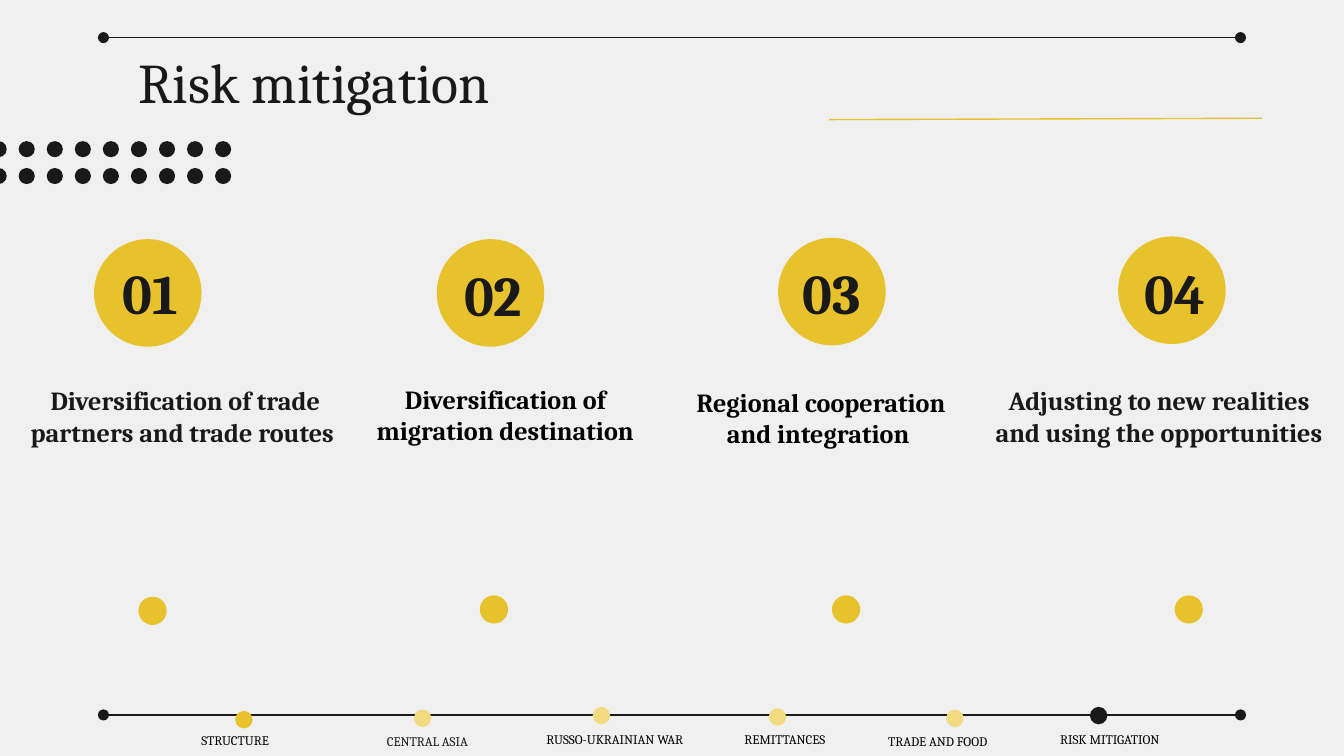
from dataclasses import dataclass

from lxml.etree import SubElement
from pptx import Presentation
from pptx.dml.color import RGBColor
from pptx.enum.shapes import MSO_CONNECTOR, MSO_SHAPE
from pptx.enum.text import MSO_ANCHOR, MSO_AUTO_SIZE, PP_ALIGN
from pptx.oxml.ns import qn
from pptx.util import Inches, Pt


@dataclass(frozen=True)
class Theme:
    font: str = "Cambria"
    background: str = "F0F0F0"
    ink: str = "191919"
    black: str = "000000"
    yellow: str = "E7C22C"
    pale_yellow: str = "F1DA80"
    title_size: int = 30
    heading_size: int = 14
    label_size: int = 7
    line_width: float = 0.75


THEME = Theme()

# number, circle left and top, number box left and top
NUMBERS = [
    ("01", 0.7, 1.78, 0.72, 1.93),
    ("02", 3.25, 1.78, 3.27, 1.94),
    ("03", 5.79, 1.77, 5.79, 1.93),
    ("04", 8.32, 1.76, 8.34, 1.93),
]

# heading, left, top, width, colour
HEADINGS = [
    ("Diversification of trade partners and trade routes ", 0.13, 2.85, 2.5, THEME.ink),
    ("Diversification of migration destination", 2.57, 2.84, 2.38, THEME.black),
    ("Regional cooperation and integration ", 4.92, 2.86, 2.38, THEME.black),
    ("Adjusting to new realities and using the opportunities ", 7.29, 2.85, 2.67, THEME.ink),
]

# left and top of the dot under each column
COLUMN_DOTS = [(1.03, 4.44), (3.57, 4.43), (6.19, 4.43), (8.74, 4.43)]

# left, top and colour of each progress marker
MARKERS = [
    (1.75, 5.29, THEME.yellow),
    (3.08, 5.28, THEME.pale_yellow),
    (4.41, 5.26, THEME.pale_yellow),
    (5.72, 5.27, THEME.pale_yellow),
    (7.04, 5.28, THEME.pale_yellow),
    (8.11, 5.26, THEME.ink),
]

# label, left, top, width, alignment, colour
LABELS = [
    ("STRUCTURE", 1.4, 5.4, 0.95, PP_ALIGN.LEFT, THEME.black),
    ("CENTRAL ASIA", 2.5, 5.41, 1.36, PP_ALIGN.CENTER, THEME.ink),
    ("RUSSO-UKRAINIAN WAR", 3.84, 5.39, 1.47, PP_ALIGN.CENTER, THEME.black),
    ("REMITTANCES", 5.44, 5.39, 0.91, PP_ALIGN.LEFT, THEME.black),
    ("TRADE AND FOOD", 6.51, 5.41, 1.86, PP_ALIGN.LEFT, THEME.black),
    ("RISK MITIGATION", 7.79, 5.39, 1.11, PP_ALIGN.LEFT, THEME.black),
]


def rgb(color):
    return RGBColor.from_string(color)


def add_circle(shapes, left, top, diameter, color):
    circle = shapes.add_shape(
        MSO_SHAPE.OVAL, Inches(left), Inches(top), Inches(diameter), Inches(diameter)
    )
    circle.shadow.inherit = False
    circle.fill.solid()
    circle.fill.fore_color.rgb = rgb(color)
    circle.line.fill.background()


def add_line(page, start, end, color, oval_ends=False):
    line = page.shapes.add_connector(
        MSO_CONNECTOR.STRAIGHT, *(Inches(value) for value in start + end)
    )
    line.line.color.rgb = rgb(color)
    line.line.width = Pt(THEME.line_width)
    properties = line._element.spPr
    if oval_ends:
        for end_name in ("a:headEnd", "a:tailEnd"):
            SubElement(properties.find(qn("a:ln")), qn(end_name), type="oval")
    SubElement(properties, qn("a:effectLst"))


def write_text(box, text, size, color, bold=False, align=PP_ALIGN.CENTER,
               anchor=MSO_ANCHOR.TOP, vertical_inset=0.1):
    frame = box.text_frame
    frame.word_wrap = True
    frame.auto_size = MSO_AUTO_SIZE.NONE
    frame.vertical_anchor = anchor
    frame.margin_left = frame.margin_right = Inches(0.1)
    frame.margin_top = frame.margin_bottom = Inches(vertical_inset)
    para = frame.paragraphs[0]
    para.alignment = align
    span = para.add_run()
    span.text = text
    span.font.name = THEME.font
    span.font.size = Pt(size)
    span.font.bold = bold
    span.font.color.rgb = rgb(color)


def add_text(page, position, text, size, color, **style):
    box = page.shapes.add_textbox(*(Inches(value) for value in position))
    write_text(box, text, size, color, **style)


def set_title(page, text):
    title = page.shapes.title
    title.left, title.top = Inches(-1.83), Inches(0.25)
    title.width, title.height = Inches(8.43), Inches(0.63)
    write_text(title, text, THEME.title_size, THEME.ink)


def add_dot_grid(page, columns=9, rows=2):
    group = page.shapes.add_group_shape()
    step = (1.6 + 0.07) / (columns - 1)
    for column in range(columns):
        for row in range(rows):
            add_circle(group.shapes, -0.07 + column * step, 1.05 + row * 0.2, 0.12, THEME.ink)


def add_columns(page):
    for number, circle_left, circle_top, left, top in NUMBERS:
        add_circle(page.shapes, circle_left, circle_top, 0.8, THEME.yellow)
        add_text(page, (left, top, 0.8, 0.49), number, THEME.title_size, THEME.ink,
                 bold=True, anchor=MSO_ANCHOR.MIDDLE)
    for heading, left, top, width, color in HEADINGS:
        add_text(page, (left, top, width, 0.58), heading, THEME.heading_size, color,
                 bold=True, anchor=MSO_ANCHOR.BOTTOM)
    for left, top in COLUMN_DOTS:
        add_circle(page.shapes, left, top, 0.21, THEME.yellow)


def add_progress_bar(page):
    add_line(page, (0.77, 5.32), (9.23, 5.32), THEME.ink, oval_ends=True)
    for left, top, color in MARKERS:
        add_circle(page.shapes, left, top, 0.13, color)
    for label, left, top, width, align, color in LABELS:
        add_text(page, (left, top, width, 0.22), label, THEME.label_size, color,
                 align=align, vertical_inset=0.05)


def main():
    deck = Presentation()
    deck.slide_width = Inches(10)
    deck.slide_height = deck.slide_width * 9 // 16
    page = deck.slides.add_slide(deck.slide_layouts[5])
    page.background.fill.solid()
    page.background.fill.fore_color.rgb = rgb(THEME.background)

    set_title(page, "Risk mitigation ")
    add_line(page, (0.77, 0.28), (9.23, 0.28), THEME.ink, oval_ends=True)
    add_line(page, (6.17, 0.89), (9.39, 0.88), THEME.yellow)
    add_dot_grid(page)
    add_columns(page)
    add_progress_bar(page)
    deck.save("out.pptx")


if __name__ == "__main__":
    main()
